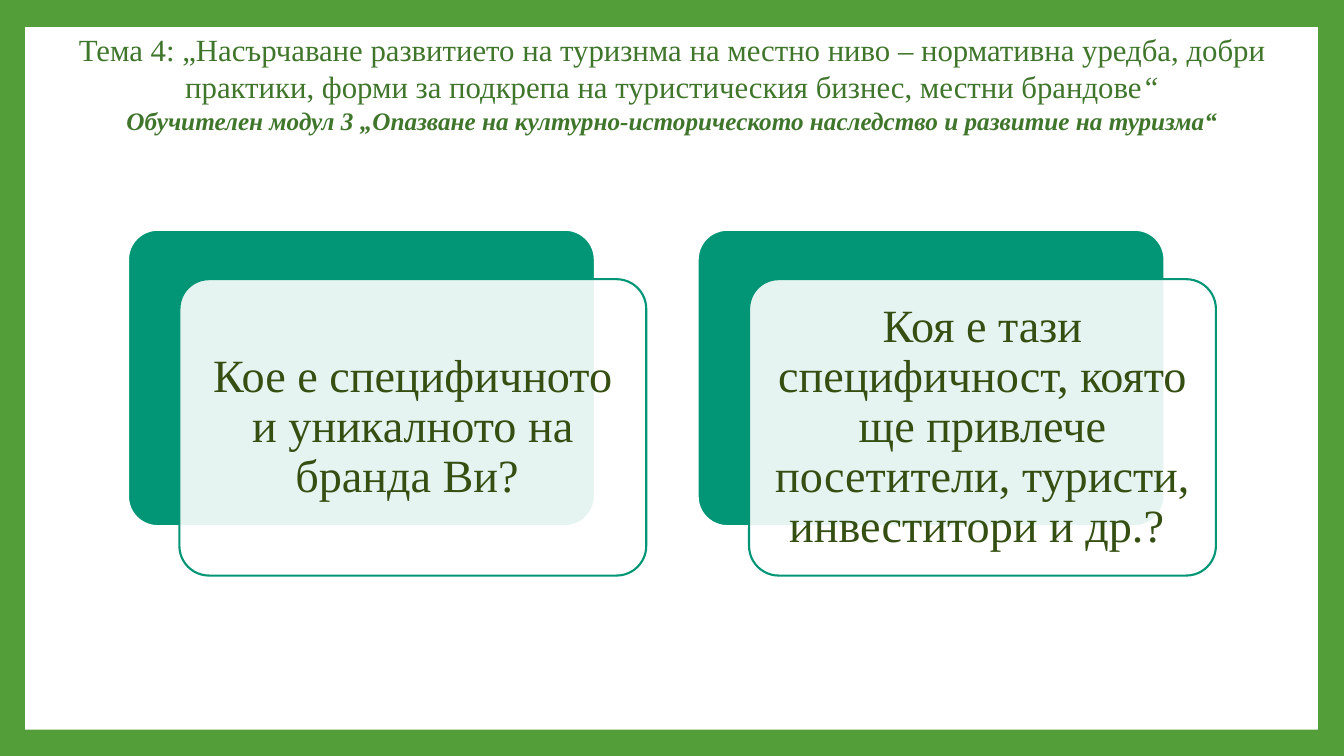
from lxml import etree
from pptx import Presentation
from pptx.dml.color import RGBColor
from pptx.enum.shapes import MSO_SHAPE
from pptx.enum.text import MSO_ANCHOR, PP_ALIGN
from pptx.oxml.ns import qn
from pptx.util import Inches, Pt

RECTANGLE = MSO_SHAPE.RECTANGLE
ROUNDED = MSO_SHAPE.ROUNDED_RECTANGLE
MIDDLE = MSO_ANCHOR.MIDDLE
CENTER = PP_ALIGN.CENTER

FONT = "Times New Roman"
FRAME_GREEN = "549E39"
TITLE_GREEN = "3F762B"
TEXT_GREEN = "354F12"
TEAL = "029676"
WHITE = "FFFFFF"

CARD_LEFT, CARD_TOP, CARD_STEP = 1.27, 2.28, 5.65
CARD_WIDTH, CARD_HEIGHT = 4.63, 2.94
PANEL_SHIFT_X, PANEL_SHIFT_Y = 0.51, 0.49

TOPIC = (
    "Тема 4: „Насърчаване развитието на туризнма на местно ниво – нормативна уредба, "
    "добри практики, форми за подкрепа на туристическия бизнес, местни брандове"
)
MODULE = (
    "Обучителен модул 3 „Опазване на културно-историческото наследство "
    "и развитие на туризма“"
)
QUESTIONS = [
    "Кое е специфичното и уникалното на бранда Ви? ",
    "Коя е тази специфичност, която ще привлече посетители, туристи, инвеститори и др.? ",
]


def color(value):
    return RGBColor.from_string(value)


def add_box(page, kind, left, top, width, height, fill, line=None):
    box = page.shapes.add_shape(
        kind, Inches(left), Inches(top), Inches(width), Inches(height)
    )
    box.shadow.inherit = False
    box.fill.solid()
    box.fill.fore_color.rgb = color(fill)
    if line:
        box.line.color.rgb = color(line)
        box.line.width = Pt(1.5)
    else:
        box.line.fill.background()
    return box


def add_card_layer(page, left, top, fill, line):
    layer = add_box(page, ROUNDED, left, top, CARD_WIDTH, CARD_HEIGHT, fill, line)
    layer.adjustments[0] = 0.1
    return layer


def set_opacity(box, percent):
    fill_color = box.fill._xPr.find(qn("a:solidFill"))[0]
    etree.SubElement(fill_color, qn("a:alpha"), val=str(percent * 1000))


def add_question_card(page, left, question):
    add_card_layer(page, left, CARD_TOP, TEAL, WHITE)
    panel = add_card_layer(
        page, left + PANEL_SHIFT_X, CARD_TOP + PANEL_SHIFT_Y, WHITE, TEAL
    )
    set_opacity(panel, 90)
    frame = panel.text_frame
    frame.word_wrap = True
    frame.vertical_anchor = MIDDLE
    frame.margin_left = frame.margin_right = Inches(0.14)
    frame.margin_top = frame.margin_bottom = Inches(0.14)
    para = frame.paragraphs[0]
    para.text = question
    para.alignment = CENTER
    para.line_spacing = 0.9
    para.font.name = FONT
    para.font.size = Pt(33)
    para.font.color.rgb = color(TEXT_GREEN)


def add_span(para, text, size, bold=False, italic=False):
    span = para.add_run()
    span.text = text
    span.font.name = FONT
    span.font.size = Pt(size)
    span.font.bold = bold
    span.font.italic = italic
    span.font.color.rgb = color(TITLE_GREEN)


def add_title(page):
    box = page.shapes.add_textbox(
        Inches(0.37), Inches(0.26), Inches(12.59), Inches(1.18)
    )
    box.text_frame.word_wrap = True
    para = box.text_frame.paragraphs[0]
    para.alignment = CENTER
    add_span(para, TOPIC, 22)
    add_span(para, "“", 22, italic=True)
    para.add_line_break()
    add_span(para, MODULE, 18, bold=True, italic=True)


def main():
    deck = Presentation()
    deck.slide_width = Inches(13.33)
    deck.slide_height = Inches(7.5)
    page = deck.slides.add_slide(deck.slide_layouts[6])
    page.background.fill.solid()
    page.background.fill.fore_color.rgb = color(FRAME_GREEN)
    add_box(page, RECTANGLE, 0.25, 0.27, 12.82, 6.97, WHITE)
    for index, question in enumerate(QUESTIONS):
        add_question_card(page, CARD_LEFT + index * CARD_STEP, question)
    add_title(page)
    deck.save("out.pptx")


if __name__ == "__main__":
    main()
